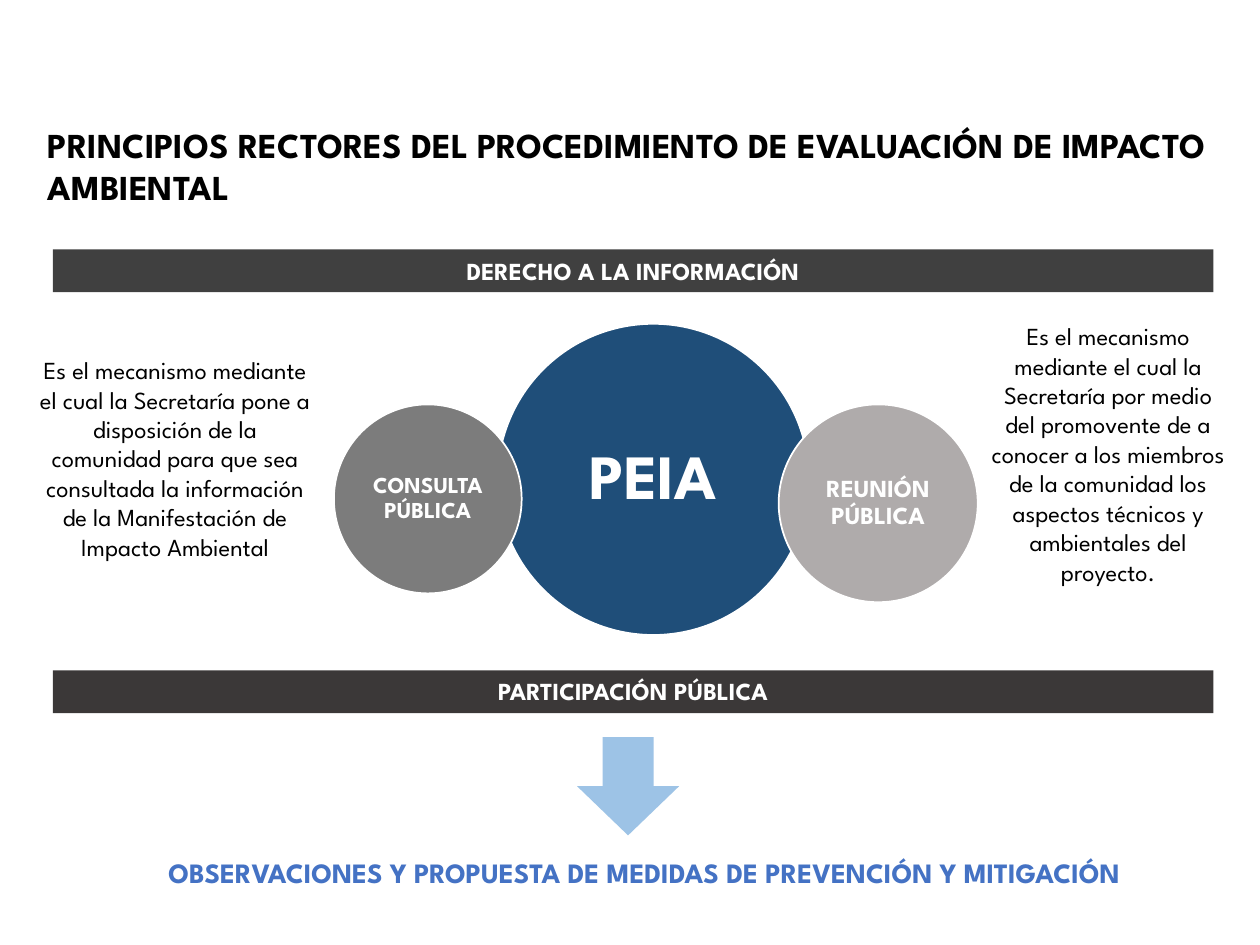
from pptx import Presentation
from pptx.dml.color import RGBColor
from pptx.enum.shapes import MSO_SHAPE
from pptx.enum.text import MSO_ANCHOR, PP_ALIGN
from pptx.util import Inches, Pt

FONT = "League Spartan"
BLACK = RGBColor(0x00, 0x00, 0x00)
WHITE = RGBColor(0xFF, 0xFF, 0xFF)
NAVY = RGBColor(0x1F, 0x4E, 0x79)
GRAY = RGBColor(0x7C, 0x7C, 0x7C)
LIGHT_GRAY = RGBColor(0xAF, 0xAB, 0xAB)
CHARCOAL = RGBColor(0x40, 0x40, 0x40)
DARK_BROWN = RGBColor(0x3B, 0x38, 0x38)
SKY = RGBColor(0x9D, 0xC3, 0xE6)
BLUE = RGBColor(0x44, 0x72, 0xC4)


def write(shape, text, size, color, bold=True, align=PP_ALIGN.CENTER,
          anchor=MSO_ANCHOR.TOP, inset=None, spacing=1.0):
    frame = shape.text_frame
    frame.word_wrap = True
    frame.vertical_anchor = anchor
    if inset is not None:
        for side in ("left", "top", "right", "bottom"):
            setattr(frame, f"margin_{side}", Inches(inset))
    para = frame.paragraphs[0]
    para.alignment = align
    para.line_spacing = spacing
    span = para.add_run()
    span.text = text
    for name, value in {"name": FONT, "size": Pt(size), "bold": bold}.items():
        setattr(span.font, name, value)
    span.font.color.rgb = color


def add_filled(kind, place, fill, outline=None):
    shape = page.shapes.add_shape(kind, *map(Inches, place))
    shape.shadow.inherit = False
    shape.fill.solid()
    shape.fill.fore_color.rgb = fill
    if outline is None:
        shape.line.fill.background()
    else:
        shape.line.color.rgb = outline
        shape.line.width = Pt(1)
    return shape


deck = Presentation()
deck.slide_width, deck.slide_height = Inches(10), Inches(7.5)
page = deck.slides.add_slide(deck.slide_layouts[5])

title = page.shapes.title
title_place = {"left": 0.28, "top": 0.93, "width": 9.45, "height": 0.77}
for name, value in title_place.items():
    setattr(title, name, Inches(value))
write(title, "PRINCIPIOS RECTORES DEL PROCEDIMIENTO DE EVALUACIÓN DE IMPACTO AMBIENTAL",
      20, BLACK, align=PP_ALIGN.LEFT)

circles = [
    ((3.95, 2.57, 2.47, 2.47), NAVY, "PEIA", 36, 0.05),
    ((2.65, 3.21, 1.49, 1.5), GRAY, "CONSULTA PÚBLICA", 13, 0.02),
    ((6.18, 3.21, 1.58, 1.57), LIGHT_GRAY, "REUNIÓN PÚBLICA", 14, 0.02),
]
for place, fill, text, size, inset in circles:
    circle = add_filled(MSO_SHAPE.OVAL, place, fill, outline=WHITE)
    write(circle, text, size, WHITE, anchor=MSO_ANCHOR.MIDDLE, inset=inset, spacing=0.9)

bars = [
    (1.98, CHARCOAL, "DERECHO A LA INFORMACIÓN"),
    (5.32, DARK_BROWN, "PARTICIPACIÓN PÚBLICA"),
]
for top, fill, text in bars:
    bar = add_filled(MSO_SHAPE.RECTANGLE, (0.42, top, 9.21, 0.34), fill)
    write(bar, text, 14, WHITE)

descriptions = [
    ((0.19, 2.77, 2.4, 2.22),
     "Es el mecanismo mediante el cual la Secretaría pone a disposición de la comunidad "
     "para que sea consultada la información de la Manifestación de Impacto Ambiental"),
    ((7.77, 2.5, 2.05, 2.69),
     "Es el mecanismo mediante el cual la Secretaría por medio del promovente de a conocer "
     "a los miembros de la comunidad los aspectos técnicos y ambientales del proyecto."),
]
for place, text in descriptions:
    box = page.shapes.add_textbox(*map(Inches, place))
    write(box, text, 14, BLACK, bold=False)

add_filled(MSO_SHAPE.DOWN_ARROW, (4.58, 5.85, 0.81, 0.78), SKY)

outcome = add_filled(MSO_SHAPE.RECTANGLE, (0.94, 6.74, 8.35, 0.37), WHITE)
write(outcome, "OBSERVACIONES Y PROPUESTA DE MEDIDAS DE PREVENCIÓN Y MITIGACIÓN", 16, BLUE)

deck.save("out.pptx")
